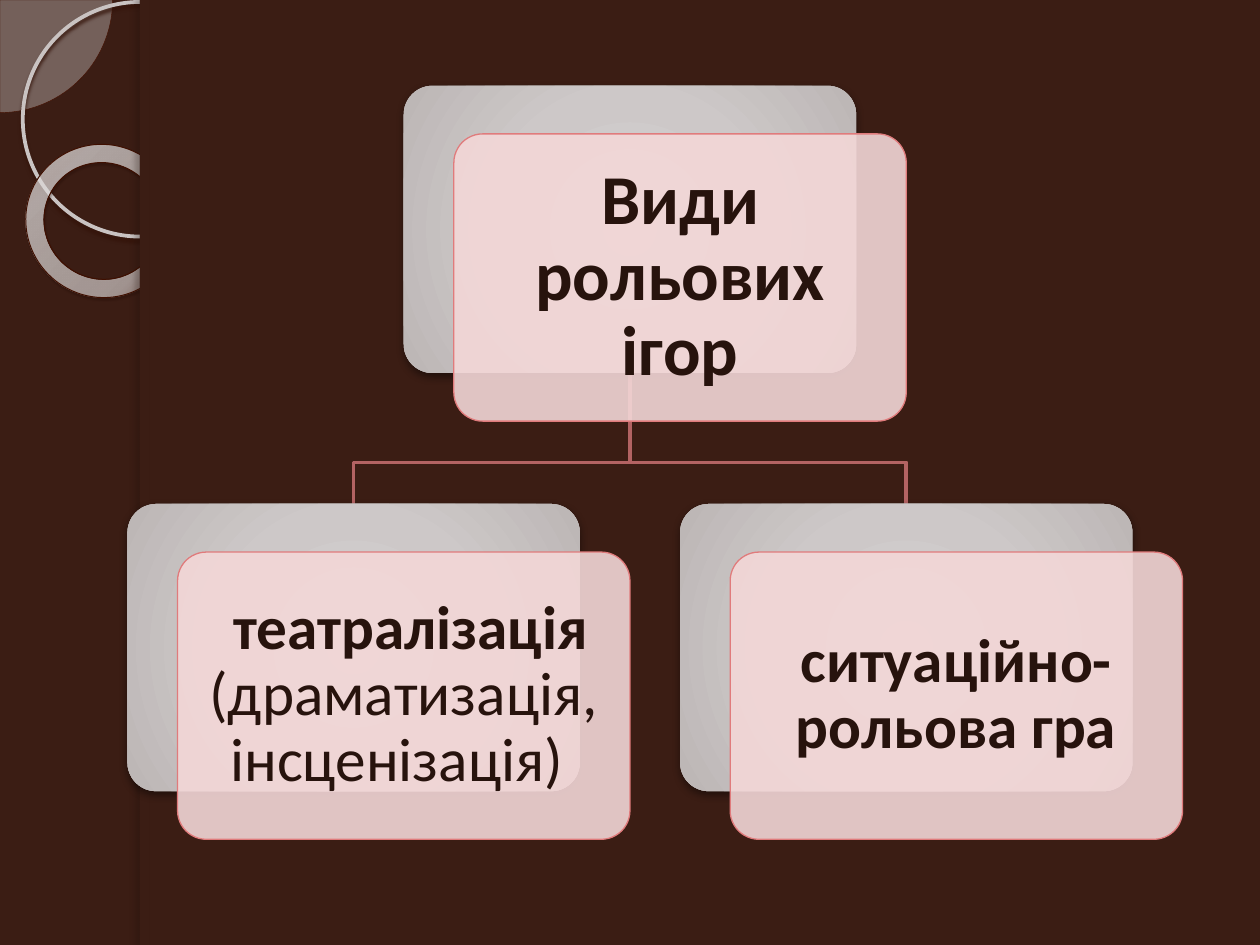
from lxml import etree
from pptx import Presentation
from pptx.dml.color import RGBColor
from pptx.enum.shapes import MSO_SHAPE
from pptx.enum.text import MSO_ANCHOR, PP_ALIGN
from pptx.oxml.ns import qn
from pptx.util import Cm, Pt

PIE, OVAL, DONUT = MSO_SHAPE.PIE, MSO_SHAPE.OVAL, MSO_SHAPE.DONUT
RECT, ROUND = MSO_SHAPE.RECTANGLE, MSO_SHAPE.ROUNDED_RECTANGLE
MIDDLE, CENTER = MSO_ANCHOR.MIDDLE, PP_ALIGN.CENTER

COLORS = {
    "back": "3B1D14", "edge": "1E0E09", "pie": "EBEAEA", "rim": "431000",
    "ring": "C9C3C2", "dark": "331208", "hoop": "3F0F00", "deep": "1D0700",
    "link": "B36363", "card": "F3D7D7", "trim": "E07B7C", "text": "27130D",
    "black": "000000",
}
# Gradient stops: position, colour, opacity (percent)
GREY = [(0, "D6D3D2", 100), (50, "CDC8C8", 100),
        (97, "BDB7B6", 100), (100, "B9B1B0", 100)]
GLOW = [(0, "F3F2F2", 70), (70, "F9F8F8", 55), (100, "461000", 60)]

FONT = "Calibri"
CARD_W, CARD_H = 9.12, 5.79     # card size, cm
STEP_X, STEP_Y = 1.01, 0.97     # front card offset
LEFT, SPAN = 2.57, 11.14        # first child, distance between children
TOP, ROW, BEND = 1.73, 10.16, 9.32


def rgb(name):
    return RGBColor.from_string(COLORS[name])


def add_sub(node, tag, **attrs):
    return etree.SubElement(node, qn(tag), {k: str(v) for k, v in attrs.items()})


def set_alpha(color, part):
    add_sub(color, "a:alpha", val=part * 1000)


def add_part(slide, kind, box, fill=None, alpha=100, line=None, width=1):
    """Add a preset shape; box is left, top, width, height in cm."""
    shape = slide.shapes.add_shape(kind, *[Cm(v) for v in box])
    shape.shadow.inherit = False
    if fill:
        shape.fill.solid()
        shape.fill.fore_color.rgb = rgb(fill)
        if alpha < 100:
            set_alpha(next(shape.element.spPr.iter(qn("a:srgbClr"))), alpha)
    else:
        shape.fill.background()
    if line:
        shape.line.color.rgb = rgb(line)
        shape.line.width = Pt(width)
    else:
        shape.line.fill.background()
    return shape


def add_shadow(shape, color, alpha, blur, dist, angle):
    effects = shape.element.spPr.find(qn("a:effectLst"))
    shadow = add_sub(effects, "a:outerShdw", blurRad=Pt(blur), dist=Pt(dist),
                     dir=angle * 60000, algn="ctr", rotWithShape=0)
    set_alpha(add_sub(shadow, "a:srgbClr", val=COLORS[color]), alpha)


def set_radial(shape, stops, focus):
    """Replace an empty fill by a circular gradient."""
    empty = shape.element.spPr.find(qn("a:noFill"))
    grad = etree.Element(qn("a:gradFill"), rotWithShape="1")
    items = add_sub(grad, "a:gsLst")
    for pos, color, alpha in stops:
        stop = add_sub(items, "a:gs", pos=pos * 1000)
        node = add_sub(stop, "a:srgbClr", val=color)
        if alpha < 100:
            set_alpha(node, alpha)
    circle = add_sub(grad, "a:path", path="circle")
    sides = {side: val * 1000 for side, val in zip("ltrb", focus)}
    add_sub(circle, "a:fillToRect", **sides)
    empty.getparent().replace(empty, grad)


def add_decor(slide):
    pie = add_part(slide, PIE, (-2.27, -2.27, 4.54, 4.54), "pie", 33, "rim", 0.25)
    pie.adjustments[0], pie.adjustments[1] = 0, 54.02

    ring = add_part(slide, OVAL, (0.46, 0.04, 4.73, 4.73), line="ring", width=2.15)
    add_shadow(ring, "dark", 85, 2, 2, 90)

    hoop = add_part(slide, DONUT, (0.51, 2.92, 3.12, 3.07), line="hoop", width=0.58)
    hoop.adjustments[0] = 0.12
    hoop.rotation = 38.6
    set_radial(hoop, GLOW, (-408, -50, 508, 150))
    add_shadow(hoop, "deep", 35, 1, 1.2, 75)

    # Content panel and its shaded left edge
    add_part(slide, RECT, (2.82, 0, 22.58, 19.05), "back")
    edge = add_part(slide, RECT, (2.82, 0, 0.2, 19.05), "back")
    add_shadow(edge, "edge", 25, 3, 3, 180)


def add_link(slide, start, end):
    """Draw a stepped line from a parent down to a child."""
    (x1, y1), (x2, y2) = start, end
    points = [(Cm(x), Cm(y)) for x, y in ((x1, BEND), (x2, BEND), (x2, y2))]
    path = slide.shapes.build_freeform(Cm(x1), Cm(y1))
    path.add_line_segments(points, close=False)
    link = path.convert_to_shape()
    link.shadow.inherit = False
    link.fill.background()
    link.line.color.rgb = rgb("link")
    link.line.width = Pt(2)


def add_card(slide, left, top, runs, size, inset):
    """Add a grey card with a pink text card in front; runs are (text, bold)."""
    base = add_part(slide, ROUND, (left, top, CARD_W, CARD_H))
    set_radial(base, GREY, (50, 50, 50, 50))
    add_shadow(base, "black", 43, 5, 2, 90)

    box = (left + STEP_X, top + STEP_Y, CARD_W, CARD_H)
    card = add_part(slide, ROUND, box, "card", 90, "trim", 0.75)
    base.adjustments[0] = card.adjustments[0] = 0.1

    frame = card.text_frame
    frame.word_wrap = True
    frame.vertical_anchor = MIDDLE
    frame.margin_left = frame.margin_right = Cm(inset)
    frame.margin_top = frame.margin_bottom = Cm(inset)
    para = frame.paragraphs[0]
    para.alignment = CENTER
    para.line_spacing = 0.9
    for text, bold in runs:
        run = para.add_run()
        run.text = text
        run.font.name = FONT
        run.font.size = Pt(size)
        run.font.bold = bold
        run.font.color.rgb = rgb("text")


def main():
    deck = Presentation()
    deck.slide_width, deck.slide_height = Cm(25.4), Cm(19.05)
    slide = deck.slides.add_slide(deck.slide_layouts[6])
    slide.background.fill.solid()
    slide.background.fill.fore_color.rgb = rgb("back")
    add_decor(slide)

    # Tree: one root centred above its children
    root = LEFT + SPAN / 2
    kids = [
        [(" театралізація ", True), ("(драматизація, інсценізація) ", False)],
        [("ситуаційно-рольова гра", True)],
    ]
    spots = [LEFT + i * SPAN for i in range(len(kids))]
    half = CARD_W / 2
    for left in spots:
        add_link(slide, (root + half, TOP + CARD_H), (left + half, ROW))
    add_card(slide, root, TOP, [("Види рольових ігор", True)], 40, 0.43)
    for left, runs in zip(spots, kids):
        add_card(slide, left, ROW, runs, 35, 0.38)

    deck.save("out.pptx")


if __name__ == "__main__":
    main()
